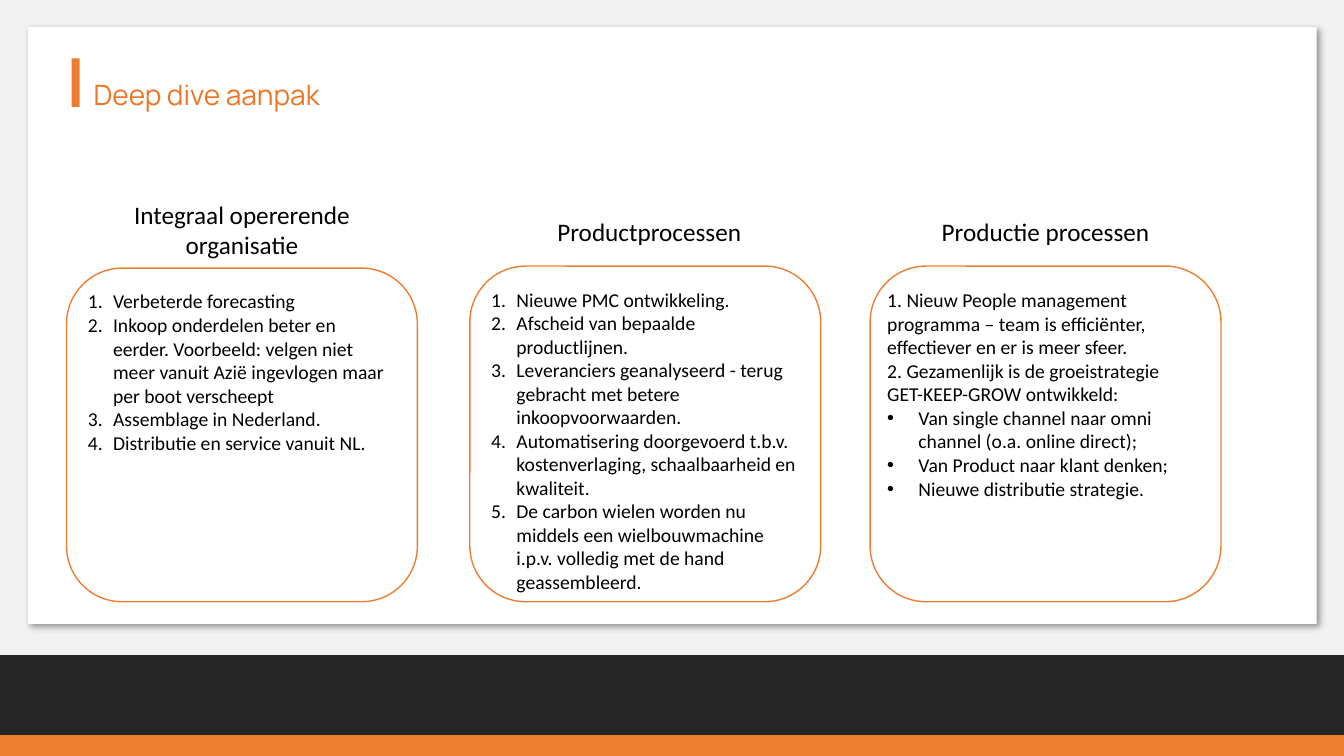
import pptx
import pptx.util
import pptx.dml.color
import pptx.enum.shapes
import pptx.enum.text
import pptx.oxml
import pptx.oxml.ns

Inches = pptx.util.Inches
SHAPES = pptx.enum.shapes.MSO_SHAPE
ALIGN = pptx.enum.text.PP_ALIGN
COLORS = {
    "backdrop": "F2F2F2",
    "card": "FFFFFF",
    "accent": "ED7D31",
    "outline": "ED7E31",
    "title": "EE7523",
    "footer": "262626",
    "text": "000000",
}
NAMESPACE = pptx.oxml.ns.nsdecls("a")
NUMBER = f'<a:buAutoNum {NAMESPACE} type="arabicPeriod"/>'
BULLET = f'<a:buChar {NAMESPACE} char="•"/>'
CARD_SHADOW = (
    f'<a:effectLst {NAMESPACE}><a:outerShdw blurRad="50800" dist="38100" dir="2700000" '
    'algn="tl" rotWithShape="0"><a:srgbClr val="000000"><a:alpha val="40000"/>'
    '</a:srgbClr></a:outerShdw></a:effectLst>'
)
PANEL_WIDTH = 3.48
PANEL_BOTTOM = 5.97

ORGANISATION = [
    "Verbeterde forecasting",
    "Inkoop onderdelen beter en eerder. Voorbeeld: velgen niet meer vanuit Azië "
    "ingevlogen maar per boot verscheept",
    "Assemblage in Nederland.",
    "Distributie en service vanuit NL.",
]
PRODUCT = [
    "Nieuwe PMC ontwikkeling.",
    "Afscheid van bepaalde productlijnen.",
    "Leveranciers geanalyseerd - terug gebracht met betere inkoopvoorwaarden.",
    "Automatisering doorgevoerd t.b.v. kostenverlaging, schaalbaarheid en kwaliteit.",
    "De carbon wielen worden nu middels een wielbouwmachine i.p.v. volledig met de "
    "hand geassembleerd.",
]
PRODUCTION = [
    "1. Nieuw People management programma – team is efficiënter, effectiever en er is "
    "meer sfeer.",
    "2. Gezamenlijk is de groeistrategie",
    "GET-KEEP-GROW ontwikkeld:",
]
STRATEGY = [
    "Van single channel naar omni channel (o.a. online direct);",
    "Van Product naar klant denken;",
    "Nieuwe distributie strategie.",
]


def color(name):
    return pptx.dml.color.RGBColor.from_string(COLORS[name])


def add_block(page, box, fill=None):
    block = page.shapes.add_shape(SHAPES.RECTANGLE, *map(Inches, box))
    block.shadow.inherit = False
    block.fill.solid()
    block.fill.fore_color.rgb = color(fill)
    block.line.fill.background()
    return block


def add_panel(page, box):
    panel = page.shapes.add_shape(SHAPES.ROUNDED_RECTANGLE, *map(Inches, box))
    panel.shadow.inherit = False
    panel.fill.background()
    panel.line.color.rgb = color("outline")
    panel.line.width = pptx.util.Pt(1)
    return panel


def write(shape, items, size=14, font="Calibri", tint="text", align=ALIGN.LEFT, inset=0.05):
    frame = shape.text_frame
    frame.word_wrap = True
    frame.vertical_anchor = pptx.enum.text.MSO_ANCHOR.TOP
    frame.margin_left = frame.margin_right = Inches(inset)
    frame.margin_top = frame.margin_bottom = Inches(0.05)
    for index, (text, marker, indent) in enumerate(items):
        para = frame.paragraphs[0] if index == 0 else frame.add_paragraph()
        para.text = text
        para.alignment = align
        if marker:
            properties = para._p.get_or_add_pPr()
            properties.set("marL", str(Inches(indent)))
            properties.set("indent", str(-Inches(indent)))
            properties.append(pptx.oxml.parse_xml(f'<a:buFont {NAMESPACE} typeface="+mj-lt"/>'
                                                  if marker == NUMBER else
                                                  f'<a:buFont {NAMESPACE} typeface="Arial"/>'))
            properties.append(pptx.oxml.parse_xml(marker))
        para.font.size = pptx.util.Pt(size)
        para.font.name = font
        para.font.color.rgb = color(tint)


def listing(texts, marker=None, indent=0):
    return [(text, marker, indent) for text in texts]


def add_text(page, box, items, **style):
    write(page.shapes.add_textbox(*map(Inches, box)), items, **style)


def add_background(page, width, height):
    add_block(page, (0, 0, width, height), "backdrop")
    add_block(page, (0, height - 0.21, width, 0.21), "accent")
    add_block(page, (0, height - 1, width, 0.79), "footer")
    card = add_block(page, (0.28, 0.27, 12.78, 5.92), "card")
    properties = card._element.spPr
    properties.remove(properties.find(pptx.oxml.ns.qn("a:effectLst")))
    properties.append(pptx.oxml.parse_xml(CARD_SHADOW))


def add_title(page, left, top, text):
    add_block(page, (left, top, 0.08, 0.48), "accent")
    add_text(page, (left + 0.12, top + 0.14, 8.49, 0.44), listing([text]),
             size=20, font="Manrope", tint="title", inset=0.1)


def add_heading(page, box, text):
    add_text(page, box, listing([text]), size=18, align=ALIGN.CENTER)


def add_column(page, left, top, heading, heading_box, items, separate=False):
    add_heading(page, heading_box, heading)
    panel = add_panel(page, (left, top, PANEL_WIDTH, PANEL_BOTTOM - top))
    if separate:
        add_text(page, (left + 0.12, top + 0.17, 3.3, 2.69), items)
    else:
        write(panel, items)


def main():
    deck = pptx.Presentation()
    deck.slide_width, deck.slide_height = Inches(13.33), Inches(7.5)
    page = deck.slides.add_slide(deck.slide_layouts[6])
    add_background(page, 13.33, 7.5)
    add_title(page, 0.71, 0.58, "Deep dive aanpak")
    add_column(page, 0.66, 2.66, "Integraal opererende organisatie",
               (0.97, 1.93, 2.86, 0.71), listing(ORGANISATION, NUMBER, 0.25))
    add_column(page, 4.66, 2.64, "Productprocessen",
               (4.7, 2.1, PANEL_WIDTH, 0.4), listing(PRODUCT, NUMBER, 0.25))
    add_column(page, 8.63, 2.64, "Productie processen", (8.63, 2.1, PANEL_WIDTH, 0.4),
               listing(PRODUCTION) + listing(STRATEGY, BULLET, 0.31), separate=True)
    deck.save("out.pptx")


if __name__ == "__main__":
    main()
